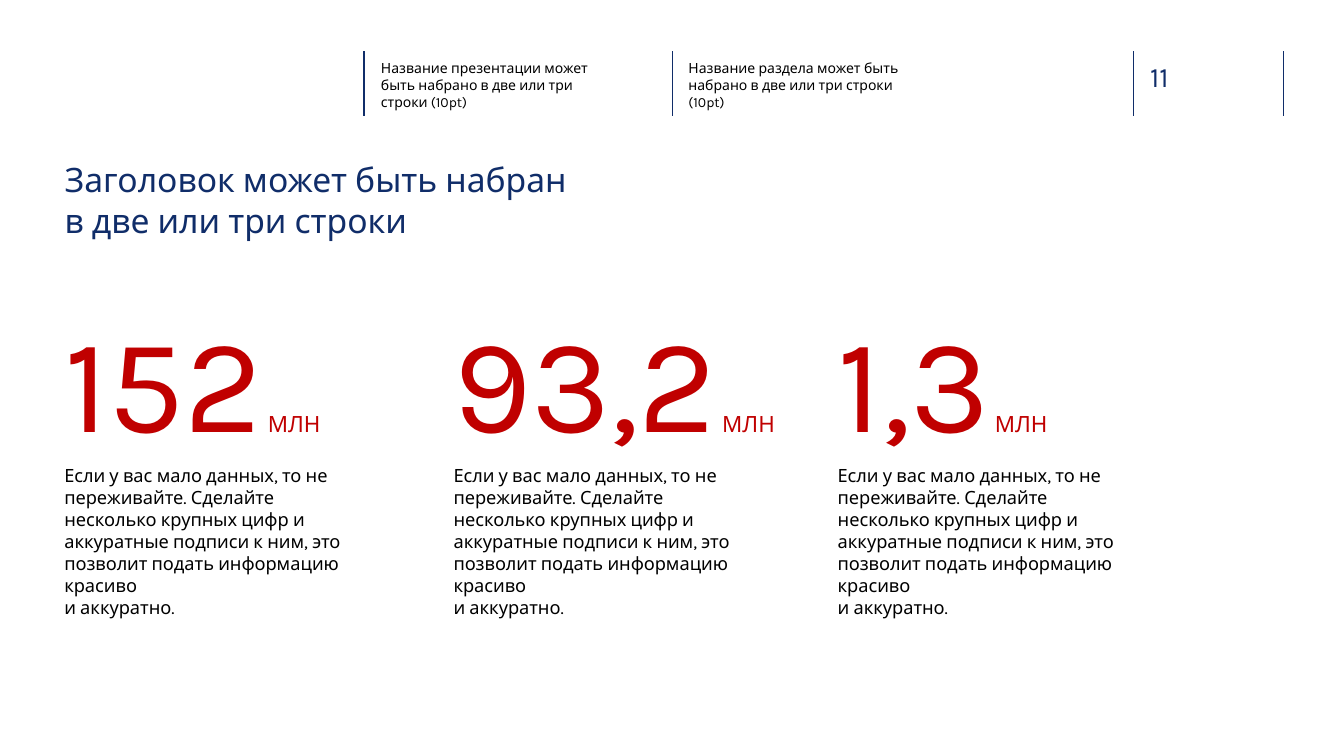
from pptx import Presentation
from pptx import util as u
from pptx.dml.color import RGBColor
from pptx.enum import shapes, text
from pptx.oxml.ns import qn
from lxml import etree

NAVY = RGBColor(0x10, 0x2D, 0x69)
RED = RGBColor(0xC0, 0x00, 0x00)
BLACK = RGBColor(0, 0, 0)

# Content
TITLE = "Заголовок может быть набран\nв две или три строки"
HEADERS = [  # left, width, text, size, colour
    (3.68, 2.57, "Название презентации может быть набрано в две или три строки (10pt)", 10, BLACK),
    (6.73, 2.57, "Название раздела может быть набрано в две или три строки (10pt)", 10, BLACK),
    (11.31, 0.73, "11", 20, NAVY),
]
UNIT = " МЛН"
CAPTION = ("Если у вас мало данных, то не переживайте. Сделайте несколько крупных "
           "цифр и аккуратные подписи к ним, это позволит подать информацию красиво "
           "\nи аккуратно.")
FIGURES = [(0.54, 3.19, "152"), (4.4, 3.55, "93,2"), (8.21, 3.19, "1,3")]  # left, width, value
DIVIDERS = [3.61, 6.67, 11.24, 12.73]
DIVIDER_TOP, DIVIDER_BOTTOM = 0.51, 1.15


def fill_text(shape, pieces):
    """Write (text, size, colour) pieces as runs of one paragraph."""
    frame = shape.text_frame
    frame_format = {"word_wrap": True, "vertical_anchor": text.MSO_ANCHOR.TOP,
                    "auto_size": text.MSO_AUTO_SIZE.SHAPE_TO_FIT_TEXT}
    for name, value in frame_format.items():
        setattr(frame, name, value)
    paragraph = frame.paragraphs[0]
    paragraph.alignment = text.PP_ALIGN.LEFT
    for content, size, colour in pieces:
        for number, line in enumerate(content.split("\n")):
            if number:
                paragraph.add_line_break()
            run = paragraph.add_run()
            run.text = line
            for name, value in {"name": "Karla", "size": u.Pt(size)}.items():
                setattr(run.font, name, value)
            run.font.color.rgb = colour


def add_text(slide, box, *pieces):
    fill_text(slide.shapes.add_textbox(*map(u.Inches, box)), pieces)


def add_divider(slide, left):
    line = slide.shapes.add_connector(
        shapes.MSO_CONNECTOR.STRAIGHT, u.Inches(left), u.Inches(DIVIDER_TOP),
        u.Inches(left), u.Inches(DIVIDER_BOTTOM))
    line.line.color.rgb = NAVY
    line.line.width = u.Pt(1)
    etree.SubElement(line._element.spPr, qn("a:effectLst"))


def main():
    presentation = Presentation()
    presentation.slide_width = u.Inches(13.33)
    presentation.slide_height = u.Inches(7.5)
    slide = presentation.slides.add_slide(presentation.slide_layouts[5])

    # Header strip
    for left in DIVIDERS:
        add_divider(slide, left)
    for left, width, content, size, colour in HEADERS:
        add_text(slide, (left, 0.54, width, 0.44), (content, size, colour))

    # Title
    title = slide.shapes.title
    place = {"left": 0.54, "top": 1.53, "width": 11.08, "height": 0.91}
    for name, value in place.items():
        setattr(title, name, u.Inches(value))
    fill_text(title, [(TITLE, 24, NAVY)])

    # Key figures with captions
    for left, width, value in FIGURES:
        add_text(slide, (left, 2.91, width, 1.72), (value, 96, RED), (UNIT, 16, RED))
        add_text(slide, (left, 4.56, 3.07, 1.41), (CAPTION, 13, BLACK))

    presentation.save("out.pptx")


if __name__ == "__main__":
    main()
